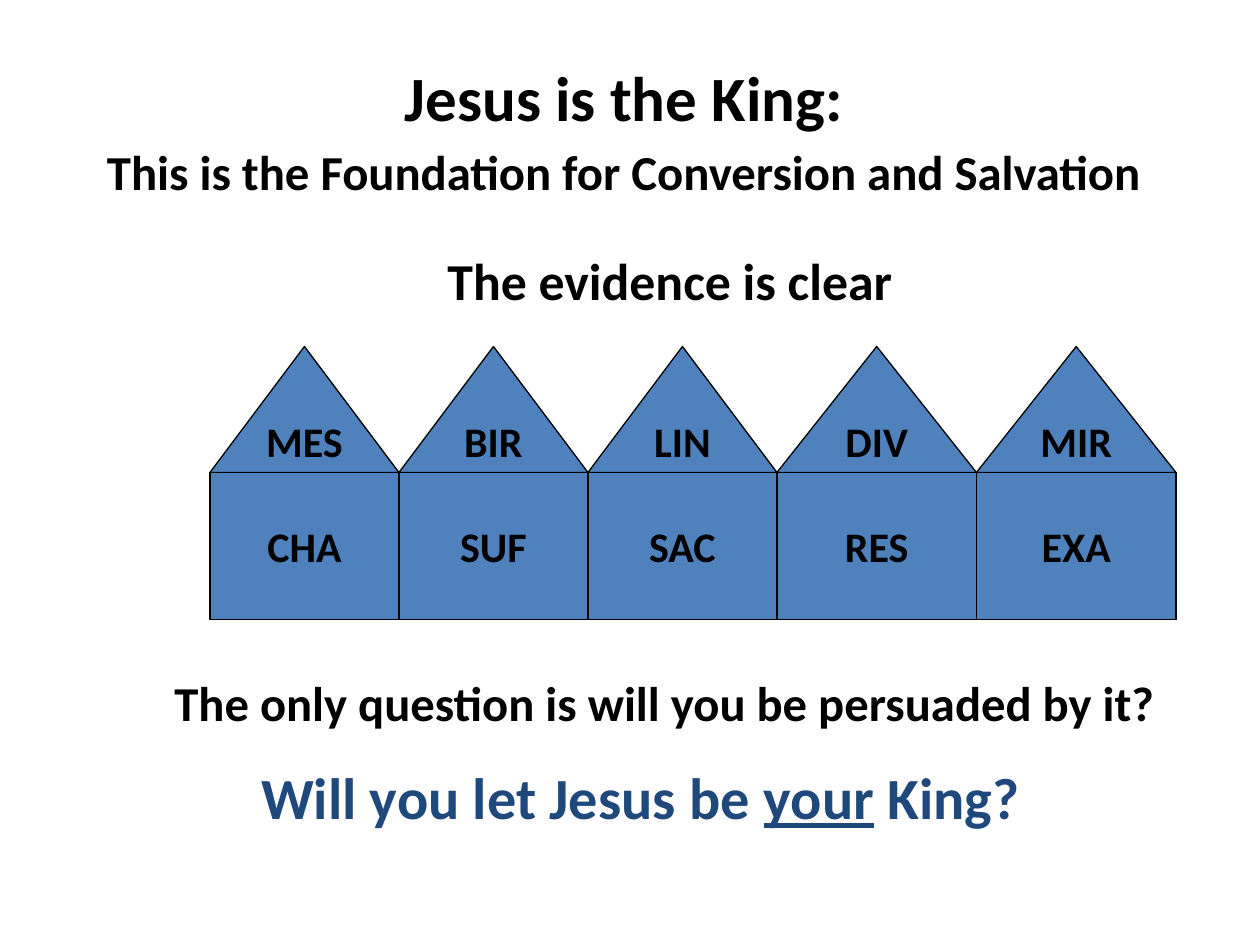
from dataclasses import dataclass
from itertools import accumulate

from pptx import Presentation
from pptx.dml.color import RGBColor as Color
from pptx.enum.shapes import MSO_SHAPE as Kind
from pptx.enum.text import MSO_ANCHOR as Anchor, PP_ALIGN as Align
from pptx.util import Pt


@dataclass(frozen=True)
class Theme:
    font: str = "Calibri"
    ink: Color = Color(0, 0, 0)
    navy: Color = Color(0x1F, 0x49, 0x7D)
    blue: Color = Color(0x4F, 0x81, 0xBD)
    title: float = 36
    sub: float = 27.9
    lead: float = 29.6
    ask: float = 27.8
    call: float = 33.3
    label: float = 24


THEME = Theme()
HOUSES = (
    ("MES", "CHA", 108),
    ("BIR", "SUF", 108),
    ("LIN", "SAC", 108),
    ("DIV", "RES", 114),
    ("MIR", "EXA", 114),
)


def write(para, text, size, color=THEME.ink, under=False):
    """Add one bold, centred run."""
    para.alignment = Align.CENTER
    run = para.add_run()
    run.text = text
    font = run.font
    font.name, font.size, font.bold = THEME.font, Pt(size), True
    font.color.rgb = color
    if under:
        font.underline = True


def frame(slide, box):
    """Add an unpadded text box and return its text frame."""
    body = slide.shapes.add_textbox(*map(Pt, box)).text_frame
    body.margin_left = body.margin_right = 0
    body.margin_top = body.margin_bottom = 0
    body.vertical_anchor = Anchor.MIDDLE
    body.word_wrap = True
    return body


def heading(slide, box):
    body = frame(slide, box)
    write(body.paragraphs[0], "Jesus is the King:", THEME.title)
    para = body.add_paragraph()
    para.space_before = Pt(4)
    write(para, "This is the Foundation for Conversion and Salvation", THEME.sub)


def line(slide, box, text, size):
    write(frame(slide, box).paragraphs[0], text, size)


def closing(slide, box):
    para = frame(slide, box).paragraphs[0]
    for text, under in (("Will you let Jesus be ", False), ("your", True), (" King?", False)):
        write(para, text, THEME.call, color=THEME.navy, under=under)


def block(slide, kind, box, text):
    shape = slide.shapes.add_shape(kind, *map(Pt, box))
    shape.shadow.inherit = False
    shape.fill.solid()
    shape.fill.fore_color.rgb = THEME.blue
    shape.line.color.rgb = THEME.ink
    shape.line.width = Pt(0.75)
    body = shape.text_frame
    body.word_wrap = False
    body.vertical_anchor = Anchor.MIDDLE
    write(body.paragraphs[0], text, THEME.label)


def street(slide, left, top, roof, wall):
    """Set the houses side by side, each a roof on a wall."""
    edges = accumulate((wide for _, _, wide in HOUSES), initial=left)
    for x, (upper, lower, wide) in zip(edges, HOUSES):
        block(slide, Kind.ISOSCELES_TRIANGLE, (x, top, wide, roof), upper)
        block(slide, Kind.RECTANGLE, (x, top + roof, wide, wall), lower)


def main():
    deck = Presentation()
    deck.slide_width, deck.slide_height = Pt(720), Pt(540)
    slide = deck.slides.add_slide(deck.slide_layouts[6])
    heading(slide, (0, 33, 713, 82))
    line(slide, (63, 140, 640, 40), "The evidence is clear", THEME.lead)
    street(slide, 120, 198, 72, 84)
    line(slide, (60, 381, 640, 40),
         "The only question is will you be persuaded by it?", THEME.ask)
    closing(slide, (46, 435, 640, 40))
    deck.save("out.pptx")


if __name__ == "__main__":
    main()
